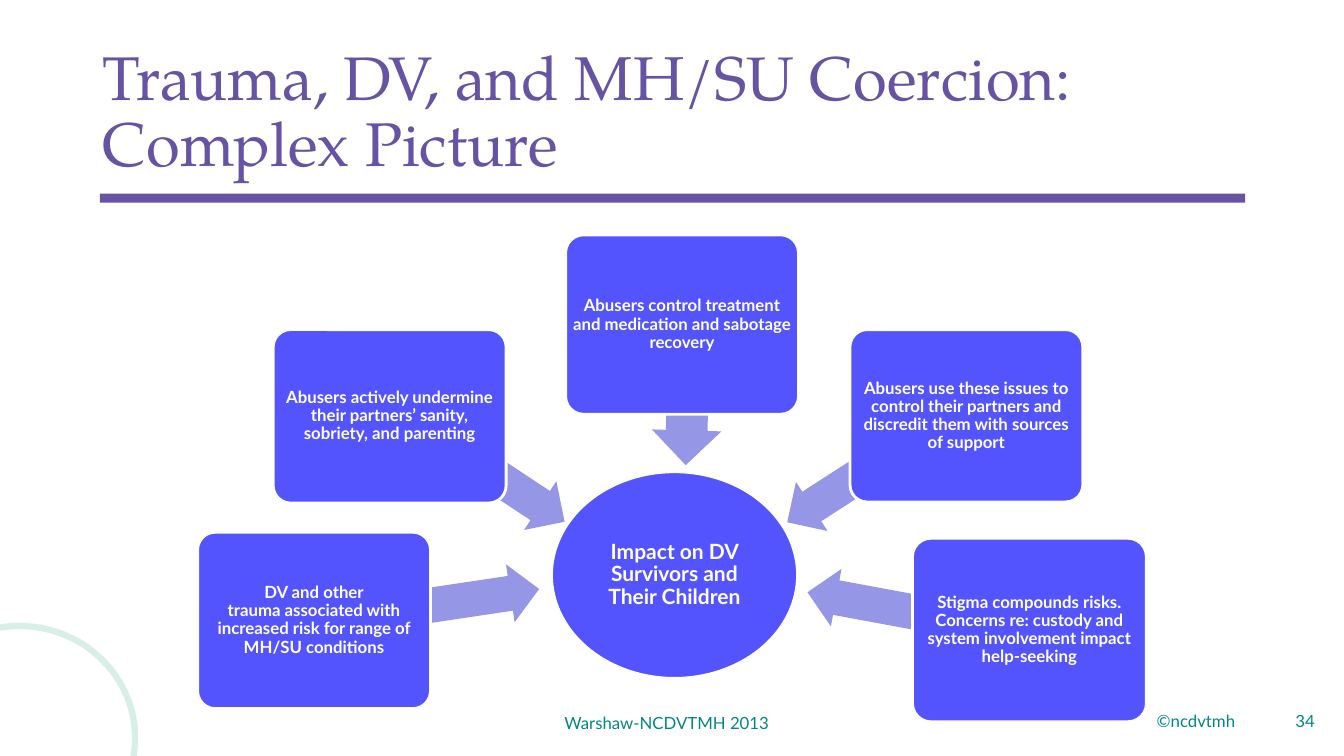
from lxml import etree
from pptx import Presentation
from pptx.dml.color import RGBColor
from pptx.enum.shapes import MSO_SHAPE as Shape
from pptx.enum.text import MSO_ANCHOR as Anchor, MSO_AUTO_SIZE as AutoSize, PP_ALIGN as Align
from pptx.oxml.ns import qn
from pptx.util import Inches, Pt

COLORS = {
    "purple": "6653A3", "teal": "008784", "mint": "73C8AE",
    "node": "5354FE", "arrow": "9596E5", "white": "FFFFFF",
}
FORMATS = {
    "title": {"size": Pt(44), "name": "TeX Gyre Pagella", "bold": False},
    "footer": {"size": Pt(12), "name": "Lato", "bold": False},
    "factor": {"size": Pt(12), "name": "Lato", "bold": True},
    "impact": {"size": Pt(15), "name": "Lato", "bold": True},
}
# arrow box, arrow rotation, factor box, factor text
FACTORS = [
    ((3.1, 5.72, 2.26, 0.58), 171.5, (1.96, 5.28, 2.31, 1.75),
     "DV and other\vtrauma associated with increased risk for range of MH/SU conditions"),
    ((3.72, 4.32, 2.05, 0.58), 213.5, (2.71, 3.27, 2.31, 1.72),
     "Abusers actively undermine their partners’ sanity, sobriety, and parenting"),
    ((6.13, 3.58, 1.38, 0.69), 271.6, (5.61, 2.33, 2.31, 1.78),
     "Abusers control treatment and medication and sabotage recovery"),
    ((7.64, 4.32, 2.11, 0.58), 327.2, (8.43, 3.27, 2.31, 1.71),
     "Abusers use these issues to control their partners and discredit them with sources of support"),
    ((7.99, 5.79, 2.24, 0.58), 10.5, (9.05, 5.34, 2.32, 1.82),
     "Stigma compounds risks. Concerns re: custody and system involvement impact help-seeking"),
]


def rgb(color):
    return RGBColor.from_string(COLORS[color])


class SlideBuilder:
    def __init__(self, slide):
        self.slide = slide

    def label(self, shape, text, style, color, align, anchor=Anchor.MIDDLE,
              inset=None, spacing=None):
        frame = shape.text_frame
        frame.word_wrap = True
        frame.auto_size = AutoSize.NONE
        frame.vertical_anchor = anchor
        if inset is not None:
            for side in ("left", "top", "right", "bottom"):
                setattr(frame, f"margin_{side}", Inches(inset))
        paragraph = frame.paragraphs[0]
        paragraph.text = text
        paragraph.alignment = align
        paragraph.space_before = Pt(0)
        if spacing:
            paragraph.line_spacing = spacing
        for run in paragraph.runs:
            for key, value in FORMATS[style].items():
                setattr(run.font, key, value)
            run.font.color.rgb = rgb(color)
        for line_break in paragraph._p.findall(qn("a:br")):
            size = str(int(FORMATS[style]["size"].pt * 100))
            etree.SubElement(line_break, qn("a:rPr"), sz=size)
        return paragraph

    def shape(self, kind, box, fill=None, line=None, width=2, rotation=0, adjust=()):
        shape = self.slide.shapes.add_shape(kind, *map(Inches, box))
        shape.shadow.inherit = False
        shape.rotation = rotation
        for index, value in enumerate(adjust):
            shape.adjustments[index] = value
        if fill:
            shape.fill.solid()
            shape.fill.fore_color.rgb = rgb(fill)
        else:
            shape.fill.background()
        if line:
            shape.line.color.rgb = rgb(line)
            shape.line.width = Pt(width)
        else:
            shape.line.fill.background()
        return shape

    def ring(self, box, opacity):
        ring = self.shape(Shape.OVAL, box, line="mint", width=4.5)
        color = ring.line._ln.find(".//" + qn("a:srgbClr"))
        etree.SubElement(color, qn("a:alpha"), val=str(opacity * 1000))

    def node(self, kind, box, text, style, inset, adjust=()):
        node = self.shape(kind, box, "node", "white", adjust=adjust)
        self.label(node, text, style, "white", Align.CENTER, inset=inset, spacing=0.9)

    def placeholder(self, index, box, text, style, color, align):
        """Move a layout placeholder and fill it with one unbulleted paragraph."""
        holder = self.slide.placeholders[index]
        holder.left, holder.top, holder.width, holder.height = map(Inches, box)
        paragraph = self.label(holder, text, style, color, align, spacing=0.9)
        properties = paragraph._p.get_or_add_pPr()
        properties.set("marL", "0")
        properties.set("indent", "0")
        etree.SubElement(properties, qn("a:buNone"))

    def footer(self, box, text, align, anchor):
        footer = self.slide.shapes.add_textbox(*map(Inches, box))
        self.label(footer, text, "footer", "teal", align, anchor)


def main():
    deck = Presentation()
    deck.slide_width, deck.slide_height = Inches(13.33), Inches(7.5)
    builder = SlideBuilder(deck.slides.add_slide(deck.slide_layouts[1]))

    builder.ring((-0.96, 6.21, 2.3, 2.22), 28)
    builder.shape(Shape.RECTANGLE, (0.99, 1.92, 11.36, 0.09), "purple")
    builder.footer((9.6, 7, 2.75, 0.3), "©ncdvtmh", Align.RIGHT, Anchor.MIDDLE)
    builder.placeholder(0, (0.92, 0.4, 11.5, 1.45),
                        "Trauma, DV, and MH/SU Coercion: Complex Picture",
                        "title", "purple", Align.LEFT)
    builder.placeholder(1, (12.47, 6.96, 0.67, 0.41), "34", "footer", "teal", Align.RIGHT)

    builder.node(Shape.OVAL, (5.47, 4.68, 2.44, 2.05),
                 "Impact on DV Survivors and Their Children", "impact", 0.01)
    for arrow_box, rotation, factor_box, text in FACTORS:
        builder.shape(Shape.LEFT_ARROW, arrow_box, "arrow", rotation=rotation,
                      adjust=(0.6, 0.5))
        builder.node(Shape.ROUNDED_RECTANGLE, factor_box, text, "factor", 0.02, (0.1,))
    builder.footer((5.5, 7.02, 2.32, 0.3), "Warshaw-NCDVTMH 2013", Align.LEFT, Anchor.TOP)

    deck.save("out.pptx")


if __name__ == "__main__":
    main()
